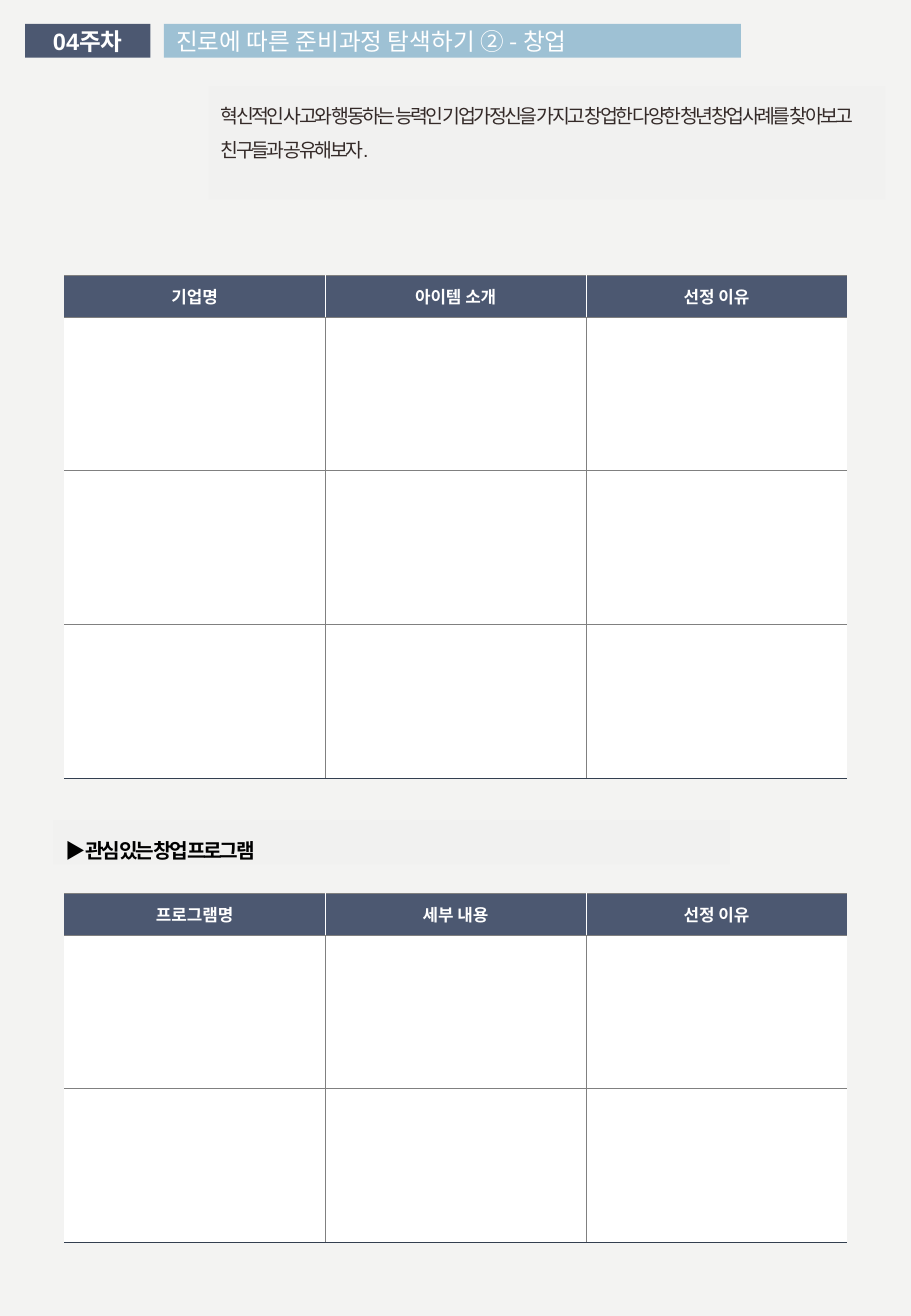
from lxml.etree import SubElement
from pptx import Presentation
from pptx.dml.color import RGBColor
from pptx.enum.shapes import MSO_SHAPE as Shape
from pptx.enum.text import MSO_ANCHOR as Anchor, MSO_AUTO_SIZE as AutoSize, PP_ALIGN as Align
from pptx.oxml import parse_xml
from pptx.oxml.ns import nsdecls, qn
from pptx.util import Pt

PAPER = RGBColor(0xF3, 0xF3, 0xF2)
PANEL = RGBColor(0xF1, 0xF1, 0xF0)
NAVY = RGBColor(0x4C, 0x58, 0x71)
SKY = RGBColor(0x9E, 0xC1, 0xD4)
WHITE = RGBColor(0xFF, 0xFF, 0xFF)
BLACK = RGBColor(0x00, 0x00, 0x00)
BROWN = RGBColor(0x34, 0x2A, 0x28)
GRAY = RGBColor(0x80, 0x80, 0x80)
SLATE = RGBColor(0x33, 0x3F, 0x50)
KOREAN_FONT = "Noto Sans CJK KR"


def write_text(frame, text, size, color, font="Arial", bold=False, align=Align.LEFT,
               anchor=Anchor.MIDDLE, line_spacing=1.0, tracking=0):
    """Add a formatted run to the first paragraph of a text frame."""
    frame.auto_size = AutoSize.NONE
    frame.word_wrap = True
    frame.vertical_anchor = anchor
    paragraph = frame.paragraphs[0]
    paragraph.alignment = align
    paragraph.line_spacing = line_spacing
    run = paragraph.add_run()
    run.text = text
    run.font.size = Pt(size)
    run.font.bold = bold
    run.font.color.rgb = color
    run.font.name = font
    properties = run.font._element
    SubElement(properties, qn("a:ea")).set("typeface", KOREAN_FONT)
    if tracking:
        properties.set("spc", str(int(tracking * 100)))


def set_borders(cell, borders):
    """Draw borders given as (side, colour or None, width)."""
    properties = cell._tc.get_or_add_tcPr()
    for index, (side, color, width) in enumerate(borders):
        fill = f'<a:solidFill><a:srgbClr val="{color}"/></a:solidFill>' if color else "<a:noFill/>"
        properties.insert(index, parse_xml(
            f'<a:ln{side} {nsdecls("a")} w="{int(Pt(width))}">{fill}</a:ln{side}>'))


presentation = Presentation()
presentation.slide_width = Pt(540)
presentation.slide_height = Pt(779.76)
slide = presentation.slides.add_slide(presentation.slide_layouts[5])
slide.background.fill.solid()
slide.background.fill.fore_color.rgb = PAPER

# Title bar
title = slide.shapes.title
title.left, title.top, title.width, title.height = Pt(97.2), Pt(14.2), Pt(342), Pt(20)
title.fill.solid()
title.fill.fore_color.rgb = SKY
title.text_frame.margin_top = title.text_frame.margin_bottom = 0
write_text(title.text_frame, "진로에 따른 준비과정 탐색하기 ", 14, WHITE)
write_text(title.text_frame, "② - 창업", 14, WHITE, font=KOREAN_FONT)

# Week label, introduction and programme heading
panels = [
    (15, 14.2, 74.2, 20, NAVY, "04주차",
     dict(size=14, color=WHITE, bold=True, align=Align.CENTER)),
    (123.8, 51, 401, 67, PANEL,
     "혁신적인 사고와 행동하는 능력인 기업가정신을 가지고 창업한 다양한 청년창업사례를 찾아보고 친구들과 공유해보자.",
     dict(size=11.5, color=BROWN, anchor=Anchor.TOP, line_spacing=1.5, tracking=-1.5)),
    (31.7, 486, 401, 26, PANEL, "▶ 관심 있는 창업 프로그램",
     dict(size=12, color=BLACK, font=KOREAN_FONT, bold=True, anchor=Anchor.TOP,
          line_spacing=1.5, tracking=-1.5)),
]
for left, top, width, height, fill, text, text_format in panels:
    shape = slide.shapes.add_shape(Shape.RECTANGLE, Pt(left), Pt(top), Pt(width), Pt(height))
    shape.shadow.inherit = False
    shape.fill.solid()
    shape.fill.fore_color.rgb = fill
    shape.line.fill.background()
    write_text(shape.text_frame, text, **text_format)

# Worksheet tables
HEADER_HEIGHT, ROW_HEIGHT, COLUMN_WIDTH = 24.5, 91.1, 154.7
worksheets = [
    (163.3, 3, ["기업명", "아이템 소개", "선정 이유"]),
    (529.5, 2, ["프로그램명", "세부 내용", "선정 이유"]),
]
for top, blank_rows, headings in worksheets:
    last_column = len(headings) - 1
    table = slide.shapes.add_table(
        blank_rows + 1, len(headings), Pt(38), Pt(top), Pt(COLUMN_WIDTH * len(headings)),
        Pt(HEADER_HEIGHT + ROW_HEIGHT * blank_rows)).table
    table.first_row = table.horz_banding = False
    for column in table.columns:
        column.width = Pt(COLUMN_WIDTH)
    for row_index, row in enumerate(table.rows):
        is_header = row_index == 0
        row.height = Pt(HEADER_HEIGHT if is_header else ROW_HEIGHT)
        divider = WHITE if is_header else GRAY
        bottom = ("B", SLATE, 0.75) if row_index == blank_rows else ("B", GRAY, 0.5)
        for column_index, cell in enumerate(row.cells):
            cell.fill.solid()
            cell.fill.fore_color.rgb = NAVY if is_header else WHITE
            set_borders(cell, [
                ("L", divider if column_index > 0 else None, 0.5),
                ("R", divider if column_index < last_column else None, 0.5),
                ("T", GRAY, 0.5),
                bottom,
            ])
            if is_header:
                cell.vertical_anchor = Anchor.MIDDLE
                paragraph_frame = cell.text_frame
                write_text(paragraph_frame, headings[column_index], 10, WHITE,
                           bold=True, align=Align.CENTER)

presentation.save("out.pptx")
